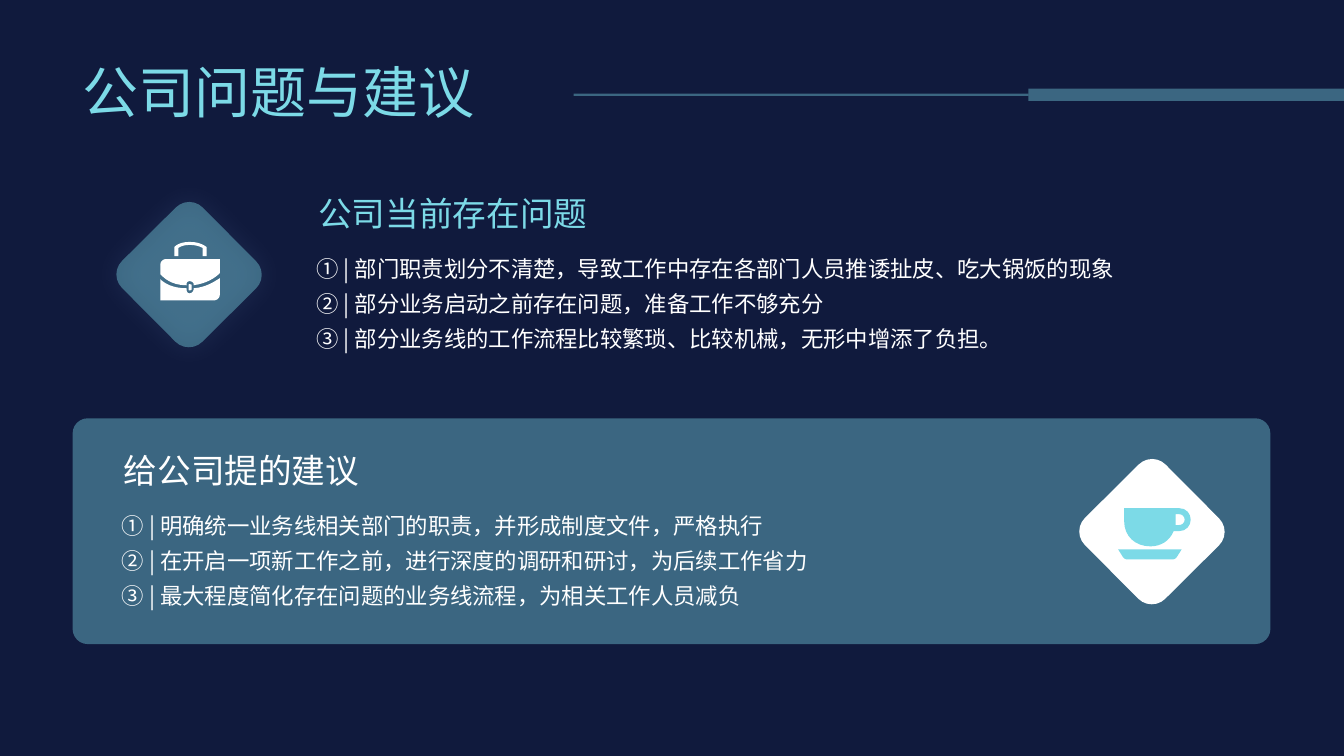
from lxml.etree import SubElement
from pptx import Presentation
from pptx.dml.color import RGBColor
from pptx.enum.shapes import MSO_CONNECTOR, MSO_SHAPE
from pptx.enum.text import MSO_ANCHOR, MSO_AUTO_SIZE, PP_ALIGN
from pptx.oxml.ns import qn
from pptx.util import Inches, Pt

NAVY, AQUA, WHITE, GLOW = "101A3D", "7CDAE7", "FFFFFF", "7B9CCF"
BODY_FONT, TITLE_FONT = "Noto Sans CJK JP", "Noto Sans CJK SC"
PROBLEMS = [
    "① | 部门职责划分不清楚，导致工作中存在各部门人员推诿扯皮、吃大锅饭的现象",
    "② | 部分业务启动之前存在问题，准备工作不够充分",
    "③ | 部分业务线的工作流程比较繁琐、比较机械，无形中增添了负担。",
]
SUGGESTIONS = [
    "① | 明确统一业务线相关部门的职责，并形成制度文件，严格执行",
    "② | 在开启一项新工作之前，进行深度的调研和研讨，为后续工作省力",
    "③ | 最大程度简化存在问题的业务线流程，为相关工作人员减负",
]
BRIEFCASE = [
    [(0.29, 0.42), (0.3, 0.42, 0.31, 0.42, 0.31, 0.43), (0.31, 0.47),
     (0.31, 0.48, 0.3, 0.48, 0.29, 0.48), (0.28, 0.48, 0.28, 0.48, 0.28, 0.47),
     (0.28, 0.43), (0.28, 0.42, 0.28, 0.42, 0.29, 0.42)],
    [(0.59, 0.36), (0.59, 0.52), (0.59, 0.56, 0.56, 0.58, 0.53, 0.58),
     (0, 0.58), (0, 0.37), (0.04, 0.41, 0.12, 0.46, 0.26, 0.46), (0.26, 0.47),
     (0.26, 0.49, 0.27, 0.51, 0.29, 0.51), (0.31, 0.51, 0.33, 0.49, 0.33, 0.47),
     (0.33, 0.46), (0.46, 0.45, 0.54, 0.39, 0.59, 0.36)],
    [(0.06, 0.17), (0.59, 0.17), (0.59, 0.31), (0.55, 0.35, 0.47, 0.41, 0.33, 0.43),
     (0.33, 0.42), (0.33, 0.4, 0.31, 0.39, 0.29, 0.39),
     (0.27, 0.39, 0.26, 0.4, 0.26, 0.42), (0.26, 0.43),
     (0.1, 0.43, 0.03, 0.35, 0, 0.32), (0, 0.23), (0, 0.2, 0.02, 0.17, 0.06, 0.17)],
    [(0.29, 0), (0.41, 0, 0.45, 0.05, 0.46, 0.05), (0.46, 0.14), (0.42, 0.14),
     (0.42, 0.06), (0.4, 0.05, 0.36, 0.03, 0.29, 0.03),
     (0.23, 0.03, 0.19, 0.05, 0.18, 0.06), (0.18, 0.14), (0.14, 0.14),
     (0.14, 0.05), (0.14, 0.05, 0.18, 0, 0.29, 0)],
]
CUP = [
    [(0.51, 0.06), (0.51, 0.17), (0.54, 0.17), (0.62, 0.17, 0.62, 0.06, 0.54, 0.06)],
    [(0, 0), (0.54, 0), (0.7, 0, 0.7, 0.23, 0.54, 0.23), (0.49, 0.23),
     (0.45, 0.33, 0.36, 0.38, 0.26, 0.38), (0.11, 0.38, 0, 0.28, 0, 0.13)],
]
SAUCER = [
    [(0, 0), (0.63, 0), (0.58, 0.08), (0.57, 0.09, 0.56, 0.1, 0.54, 0.1),
     (0.09, 0.1), (0.07, 0.1, 0.06, 0.09, 0.05, 0.08)],
]


def rgb(color):
    """Turn a hex string into a colour."""
    return RGBColor.from_string(color)


def paint(shape, color, opacity=100):
    """Give a shape a flat fill without outline or shadow."""
    shape.fill.solid()
    shape.fill.fore_color.rgb = rgb(color)
    shape.line.fill.background()
    shape.shadow.inherit = False
    set_opacity(shape, opacity)


def set_opacity(shape, percent):
    """Make the first colour of a shape partly transparent."""
    if percent < 100:
        tint = next(shape._element.spPr.iter(qn("a:srgbClr")))
        SubElement(tint, qn("a:alpha"), val=str(percent * 1000))


def add_glow(shape, color):
    """Put a soft, centred shadow around a shape."""
    effects = shape._element.spPr.find(qn("a:effectLst"))
    shadow = SubElement(effects, qn("a:outerShdw"), blurRad=str(Pt(20)),
                        dist="0", dir="0", algn="ctr", rotWithShape="0")
    tint = SubElement(shadow, qn("a:srgbClr"), val=color)
    SubElement(tint, qn("a:alpha"), val="30000")


def write(frame, lines, size, color, font=BODY_FONT, spacing=1.0):
    """Fill a text frame with evenly formatted paragraphs."""
    frame.text = "\n".join(lines)
    frame.word_wrap = True
    for paragraph in frame.paragraphs:
        paragraph.alignment = PP_ALIGN.LEFT
        paragraph.line_spacing = spacing
        for run in paragraph.runs:
            run.font.size = Pt(size)
            run.font.name = font
            run.font.color.rgb = rgb(color)
            SubElement(run._r.get_or_add_rPr(), qn("a:ea"), typeface=font)


def flatten(outline, steps=8):
    """Turn corners and cubic curves into a list of points."""
    points = [outline[0]]
    for part in outline[1:]:
        if len(part) == 2:
            points.append(part)
            continue
        x0, y0 = points[-1]
        x1, y1, x2, y2, x3, y3 = part
        for step in range(1, steps + 1):
            t = step / steps
            a, b, c, d = (1 - t) ** 3, 3 * t * (1 - t) ** 2, 3 * t * t * (1 - t), t ** 3
            points.append((a * x0 + b * x1 + c * x2 + d * x3,
                           a * y0 + b * y1 + c * y2 + d * y3))
    return points


def add_icon(slide, left, top, outlines, color):
    """Draw outlines as one filled shape from the given corner."""
    builder = None
    for outline in outlines:
        points = [(Inches(left + x), Inches(top + y)) for x, y in flatten(outline)]
        if builder is None:
            builder = slide.shapes.build_freeform(*points[0], scale=1.0)
        else:
            builder.move_to(*points[0])
        builder.add_line_segments(points[1:], close=True)
    paint(builder.convert_to_shape(), color)


def add_badge(slide, left, top, color, opacity=100):
    """Add a rounded diamond and return it."""
    diamond = slide.shapes.add_shape(MSO_SHAPE.ROUNDED_RECTANGLE, Inches(left),
                                     Inches(top), Inches(1.13), Inches(1.13))
    diamond.rotation = 45.2
    paint(diamond, color, opacity)
    return diamond


def add_points(slide, left, top, heading, color, points):
    """Add a heading with its numbered points below."""
    heading_box = slide.shapes.add_textbox(Inches(left + 0.02), Inches(top),
                                           Inches(2.94), Inches(0.5))
    write(heading_box.text_frame, [heading], 24, color)
    points_box = slide.shapes.add_textbox(Inches(left), Inches(top + 0.54),
                                          Inches(9.44), Inches(1.13))
    write(points_box.text_frame, points, 16, WHITE, spacing=1.3)


def add_header(slide, left, top, width, height):
    """Place the title and the rule that runs to the right edge."""
    title = slide.shapes.title
    title.left, title.top = Inches(left), Inches(top)
    title.width, title.height = Inches(width), Inches(height)
    write(title.text_frame, ["公司问题与建议"], 40, AQUA, TITLE_FONT, 0.9)
    title.text_frame.vertical_anchor = MSO_ANCHOR.MIDDLE
    title.text_frame.auto_size = MSO_AUTO_SIZE.NONE
    bar = slide.shapes.add_shape(MSO_SHAPE.RECTANGLE, Inches(10.2), Inches(top + 0.33),
                                 Inches(3.13), Inches(0.12))
    paint(bar, AQUA, 40)
    rule_y = Inches(top + 0.39)
    rule = slide.shapes.add_connector(MSO_CONNECTOR.STRAIGHT, Inches(left + width + 0.65),
                                      rule_y, Inches(10.2), rule_y)
    rule.end_connect(bar, 1)
    rule.line.color.rgb = rgb(AQUA)
    rule.line.width = Pt(1.5)
    set_opacity(rule, 40)
    SubElement(rule._element.spPr, qn("a:effectLst"))


def add_problems(slide, left, top):
    """Place the briefcase badge and the current problems."""
    add_glow(add_badge(slide, left, top + 0.3, AQUA, 40), GLOW)
    add_icon(slide, left + 0.28, top + 0.54, BRIEFCASE, WHITE)
    add_points(slide, left + 1.73, top, "公司当前存在问题", AQUA, PROBLEMS)


def add_suggestions(slide, left, top, width, height):
    """Place the panel with the suggestions and the cup badge."""
    panel = slide.shapes.add_shape(MSO_SHAPE.ROUNDED_RECTANGLE, Inches(left), Inches(top),
                                   Inches(width), Inches(height))
    panel.adjustments[0] = 0.067
    paint(panel, AQUA, 40)
    add_points(slide, left + 0.39, top + 0.26, "给公司提的建议", WHITE, SUGGESTIONS)
    badge_left, badge_top = left + width - 1.74, top + 0.56
    add_badge(slide, badge_left, badge_top, WHITE)
    add_icon(slide, badge_left + 0.29, badge_top + 0.33, CUP, AQUA)
    add_icon(slide, badge_left + 0.23, badge_top + 0.74, SAUCER, AQUA)


def main():
    """Build the slide and save it."""
    deck = Presentation()
    deck.slide_width, deck.slide_height = Inches(13.33), Inches(7.5)
    slide = deck.slides.add_slide(deck.slide_layouts[5])
    slide.background.fill.solid()
    slide.background.fill.fore_color.rgb = rgb(NAVY)
    add_header(slide, 0.72, 0.55, 4.32, 0.79)
    add_problems(slide, 1.31, 1.86)
    add_suggestions(slide, 0.72, 4.15, 11.88, 2.24)
    deck.save("out.pptx")


if __name__ == "__main__":
    main()
